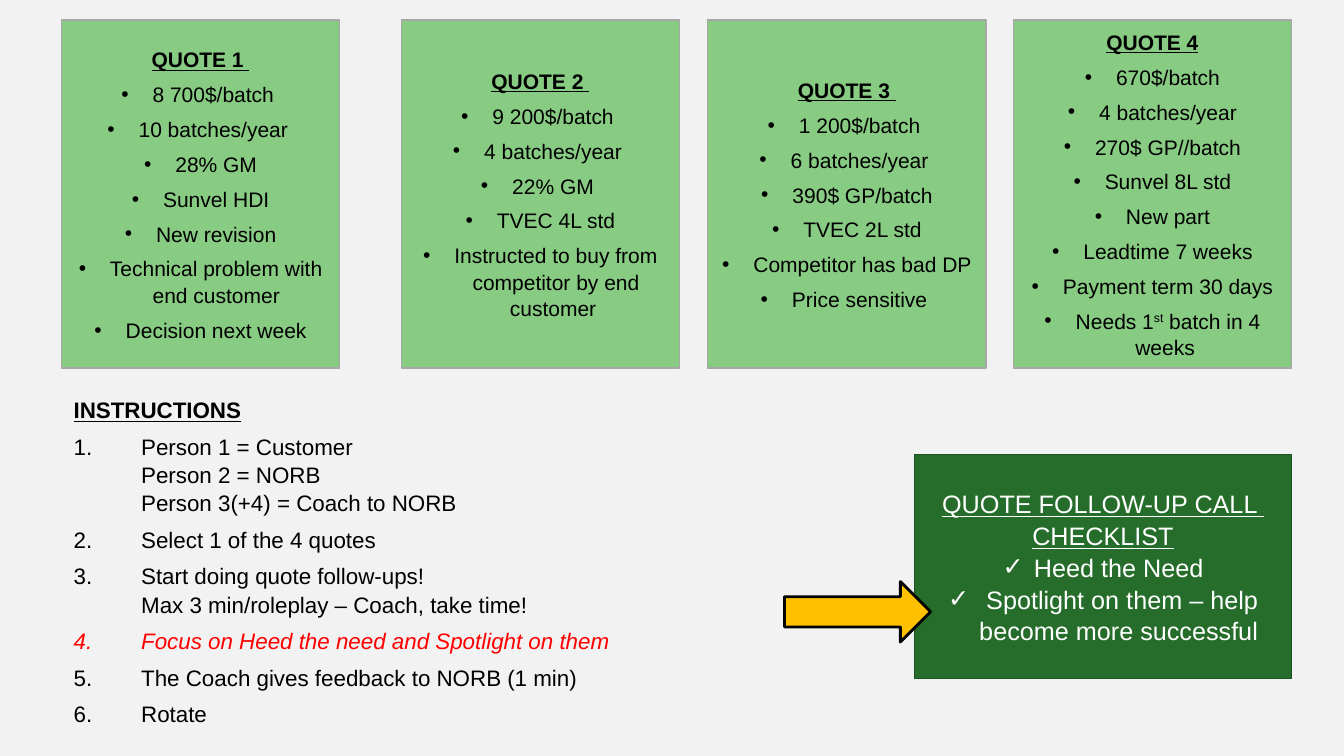
"""Build the quote follow-up roleplay slide with four quotes, instructions and a checklist."""
from lxml.etree import SubElement
from pptx import Presentation
from pptx.dml.color import RGBColor
from pptx.enum.shapes import MSO_SHAPE as Shape
from pptx.enum.text import MSO_ANCHOR as Anchor, MSO_AUTO_SIZE as AutoSize, PP_ALIGN as Align
from pptx.oxml.ns import qn
from pptx.util import Inches, Pt

COLORS = {
    "background": "F2F2F2", "card": "88CB83", "card_line": "A6A6A6",
    "checklist": "266D2B", "checklist_line": "1C5120", "arrow": "FFC000",
    "black": "000000", "white": "FFFFFF", "focus": "FF0000",
}
QUOTES = [
    (0.61, "QUOTE 1 ", ["8 700$/batch ", "10 batches/year ", "28% GM", "Sunvel HDI", "New revision",
                        "Technical problem with end customer", "Decision next week"]),
    (3.98, "QUOTE 2 ", ["9 200$/batch ", "4 batches/year ", "22% GM ", "TVEC 4L std",
                        "Instructed to buy from competitor by end customer "]),
    (7.02, "QUOTE 3 ", ["1 200$/batch ", "6 batches/year ", "390$ GP/batch", "TVEC 2L std",
                        "Competitor has bad DP", "Price sensitive "]),
    (10.05, "QUOTE 4", ["670$/batch", "4 batches/year", "270$ GP//batch", "Sunvel 8L std", "New part",
                        "Leadtime 7 weeks", "Payment term 30 days", "Needs 1^st^ batch in 4 weeks "]),
]
INSTRUCTIONS = [
    "Person 1 = Customer \vPerson 2 = NORB \vPerson 3(+4) = Coach to NORB",
    "Select 1 of the 4 quotes",
    "Start doing quote follow-ups! \vMax 3 min/roleplay – Coach, take time!",
    "Focus on Heed the need and Spotlight on them",
    "The Coach gives feedback to NORB (1 min)",
    "Rotate",
]
CHECKLIST = ["Heed the Need", " Spotlight on them – help become more successful"]


def add_block(left, top, width, height, kind, fill, line, weight):
    block = page.shapes.add_shape(kind, Inches(left), Inches(top), Inches(width), Inches(height))
    block.shadow.inherit = False
    block.fill.solid()
    block.fill.fore_color.rgb = RGBColor.from_string(COLORS[fill])
    block.line.color.rgb = RGBColor.from_string(COLORS[line])
    block.line.width = Pt(weight)
    return block


def write(box, headings, items, size, color, bullet, indent=0.31, bold=True, gap=6, align=Align.CENTER):
    frame = box.text_frame
    frame.word_wrap = True
    for index, text in enumerate(headings + items):
        is_heading = index < len(headings)
        para = frame.add_paragraph() if index else frame.paragraphs[0]
        settings = para._p.get_or_add_pPr()
        hang = 0 if is_heading else Inches(indent)
        settings.set("marL", str(hang))
        settings.set("indent", str(-hang))
        if is_heading:
            SubElement(settings, qn("a:buNone"))
        elif bullet == "1.":
            SubElement(settings, qn("a:buAutoNum"), type="arabicPeriod")
        else:
            SubElement(settings, qn("a:buFont"), typeface="Arial")
            SubElement(settings, qn("a:buChar"), char=bullet)
        para.alignment = align
        para.line_spacing = 1.05
        para.space_before = Pt(0)
        para.space_after = Pt(gap)
        pieces = text.split("^")
        para.text = pieces[0]
        for position, piece in enumerate(pieces[1:], 1):
            span = para.add_run()
            span.text = piece
            if position % 2:
                span._r.get_or_add_rPr().set("baseline", "30000")
        for span in para.runs:
            span.font.name = "Arial"
            span.font.size = Pt(size)
            span.font.bold = is_heading and bold
            span.font.underline = is_heading
            span.font.color.rgb = RGBColor.from_string(COLORS[color])
        for line_break in para._p.findall(qn("a:br")):
            SubElement(line_break, qn("a:rPr"), sz=str(size * 100))


deck = Presentation()
deck.slide_width = Inches(13.33)
deck.slide_height = Inches(7.5)
page = deck.slides.add_slide(deck.slide_layouts[1])
page.background.fill.solid()
page.background.fill.fore_color.rgb = RGBColor.from_string(COLORS["background"])
title = page.shapes.title._element
title.getparent().remove(title)

instructions = page.placeholders[1]
instructions.left, instructions.top = Inches(0.63), Inches(3.87)
instructions.width, instructions.height = Inches(7.77), Inches(3.55)
instructions.text_frame.auto_size = AutoSize.NONE
write(instructions, ["INSTRUCTIONS"], INSTRUCTIONS, 16, "black", "1.", indent=0.67, align=Align.LEFT)
for span in instructions.text_frame.paragraphs[4].runs:
    span.font.italic = True
    span.font.color.rgb = RGBColor.from_string(COLORS["focus"])

for left, heading, items in QUOTES:
    card = add_block(left, 0.2, 2.76, 3.45, Shape.RECTANGLE, "card", "card_line", 1)
    card.text_frame.vertical_anchor = Anchor.MIDDLE
    write(card, [heading], items, 15, "black", "•")

checklist = add_block(9.07, 4.51, 3.74, 2.22, Shape.RECTANGLE, "checklist", "checklist_line", 1)
checklist.text_frame.vertical_anchor = Anchor.MIDDLE
write(checklist, ["QUOTE FOLLOW-UP CALL ", "CHECKLIST"], CHECKLIST, 18, "white", "✓", bold=False, gap=0)

add_block(7.78, 5.77, 1.45, 0.6, Shape.RIGHT_ARROW, "arrow", "black", 2)

deck.save("out.pptx")
